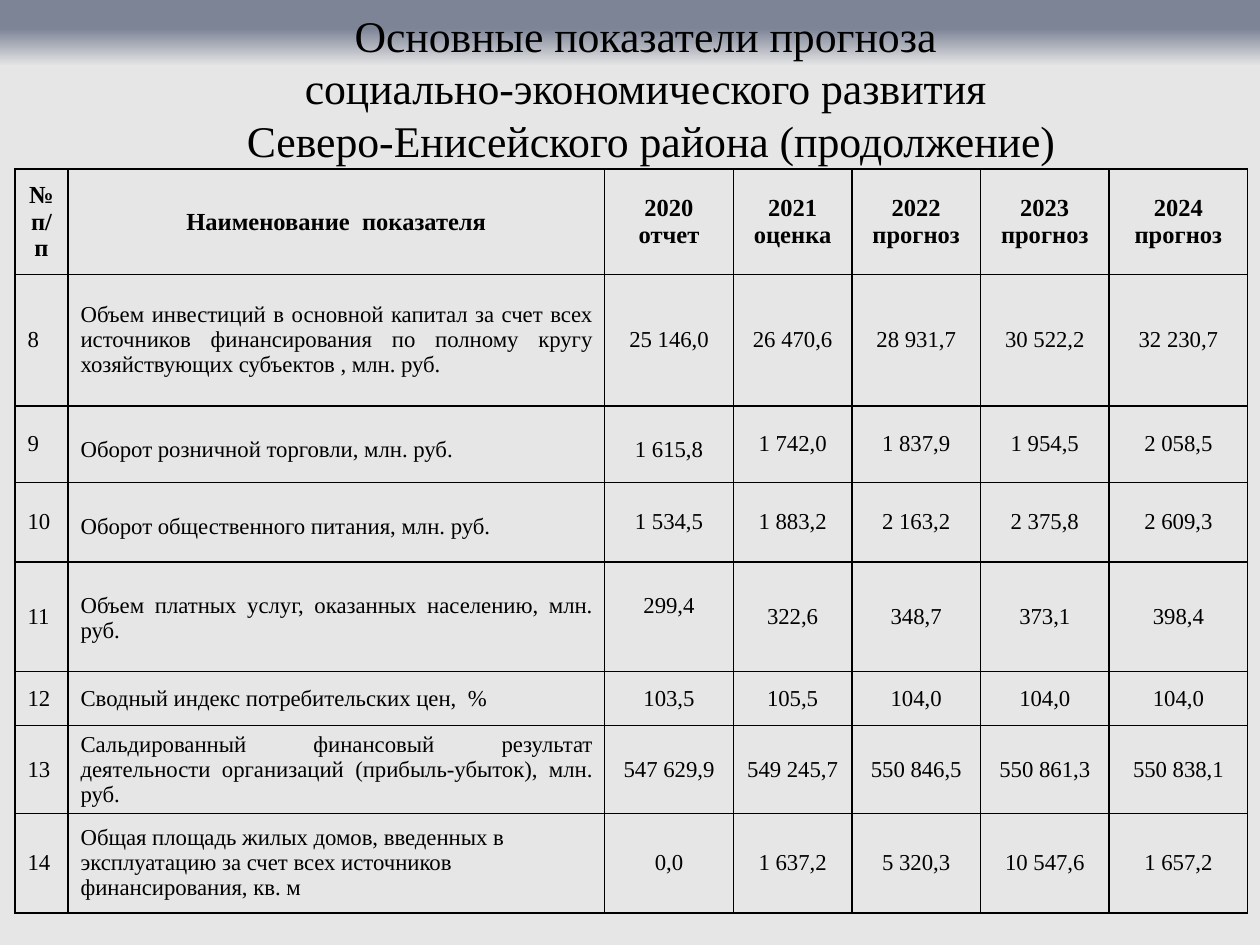
"""Build the slide with the district's socio-economic forecast table."""
from pptx import Presentation
from pptx.dml.color import RGBColor
from pptx.enum.text import MSO_ANCHOR as VA, MSO_AUTO_SIZE as FIT, PP_ALIGN as AL
from pptx.oxml import parse_xml
from pptx.oxml.ns import nsdecls, qn
from pptx.util import Pt


def color(value):
    return RGBColor.from_string(value)


def style(tf, size, bold, align, spacing):
    for p in tf.paragraphs:
        p.alignment, p.line_spacing = align, Pt(spacing)
        p.space_before = p.space_after = Pt(0)
        p.font.color.rgb = color("000000")
        fmt = {"name": "Times New Roman", "size": Pt(size), "bold": bold}
        for key, value in fmt.items():
            setattr(p.font, key, value)


prs = Presentation()
prs.slide_width, prs.slide_height = Pt(720), Pt(540)
s = prs.slides.add_slide(prs.slide_layouts[5])

fill = s.background.fill
fill.gradient()
fill.gradient_angle = 270
stops = s._element.find(".//" + qn("a:gsLst"))
for stop in list(stops):
    stops.remove(stop)
for pos, value in [(0, "7D8496"), (3, "7D8496"), (7, "E6E6E6"), (100, "E6E6E6")]:
    stops.append(parse_xml(
        f'<a:gs {nsdecls("a")} pos="{pos * 1000}"><a:srgbClr val="{value}"/></a:gs>'))

title = s.shapes.title
box = {"left": 24, "top": 0, "width": 696, "height": 156}
for key, value in box.items():
    setattr(title, key, Pt(value))
tf = title.text_frame
tf.text = ("Основные показатели прогноза \n"
           "социально-экономического развития \n"
           "Северо-Енисейского района (продолжение)")
frame = {"word_wrap": True, "auto_size": FIT.NONE,
         "vertical_anchor": VA.TOP, "margin_top": Pt(5)}
for key, value in frame.items():
    setattr(tf, key, value)
style(tf, 25, False, AL.CENTER, 30)

rows = [
    ["№ п/п", "Наименование  показателя", "2020 отчет", "2021 оценка",
     "2022 прогноз", "2023\nпрогноз", "2024 прогноз"],
    ["8", "Объем инвестиций в основной капитал за счет всех источников финансирования "
     "по полному кругу хозяйствующих субъектов , млн. руб.",
     "25 146,0", "26 470,6", "28 931,7", "30 522,2", "32 230,7"],
    ["9", "Оборот розничной торговли, млн. руб.",
     "1 615,8", "1 742,0", "1 837,9", "1 954,5", "2 058,5"],
    ["10", "Оборот общественного питания, млн. руб.",
     "1 534,5", "1 883,2", "2 163,2", "2 375,8", "2 609,3"],
    ["11", "Объем платных услуг, оказанных населению, млн. руб.",
     "299,4", "322,6", "348,7", "373,1", "398,4"],
    ["12", "Сводный индекс потребительских цен,  %",
     "103,5", "105,5", "104,0", "104,0", "104,0"],
    ["13", "Сальдированный финансовый результат деятельности организаций "
     "(прибыль-убыток), млн. руб.",
     "547 629,9", "549 245,7", "550 846,5", "550 861,3", "550 838,1"],
    ["14", "Общая площадь жилых домов, введенных в эксплуатацию за счет всех "
     "источников финансирования, кв. м",
     "0,0", "1 637,2", "5 320,3", "10 547,6", "1 657,2"],
]
widths = [30.3, 306.7, 73.5, 67.8, 73.5, 73.5, 79.2]
heights = [60.5, 75, 43.9, 45.2, 62.7, 31, 50.2, 56.9]
left_rows = {2, 3, 7}
top_cells = {(2, 1), (2, 2), (3, 1), (4, 1), (4, 2)}

tbl = s.shapes.add_table(len(rows), len(widths), Pt(8.6), Pt(96.5),
                         Pt(sum(widths)), Pt(sum(heights))).table
tbl.first_row = tbl.horz_banding = False
for col, width in zip(tbl.columns, widths):
    col.width = Pt(width)
for row, height in zip(tbl.rows, heights):
    row.height = Pt(height)

for i, row in enumerate(rows):
    for j, text in enumerate(row):
        cell = tbl.cell(i, j)
        cell.text = text
        cell.vertical_anchor = VA.MIDDLE
        if (i, j) in top_cells:
            cell.vertical_anchor, cell.margin_top = VA.TOP, Pt(18)
        size = 13 if i else 14
        align = AL.LEFT if i in left_rows else AL.JUSTIFY
        style(cell.text_frame, size, i == 0,
              align if i and j < 2 else AL.CENTER, size * 1.1)
        tcPr = cell._tc.get_or_add_tcPr()
        for side in ("lnL", "lnR", "lnT", "lnB"):
            tcPr.append(parse_xml(
                f'<a:{side} {nsdecls("a")} w="{Pt(1)}"><a:solidFill>'
                f'<a:srgbClr val="000000"/></a:solidFill></a:{side}>'))
        cell.fill.background()

prs.save("out.pptx")
